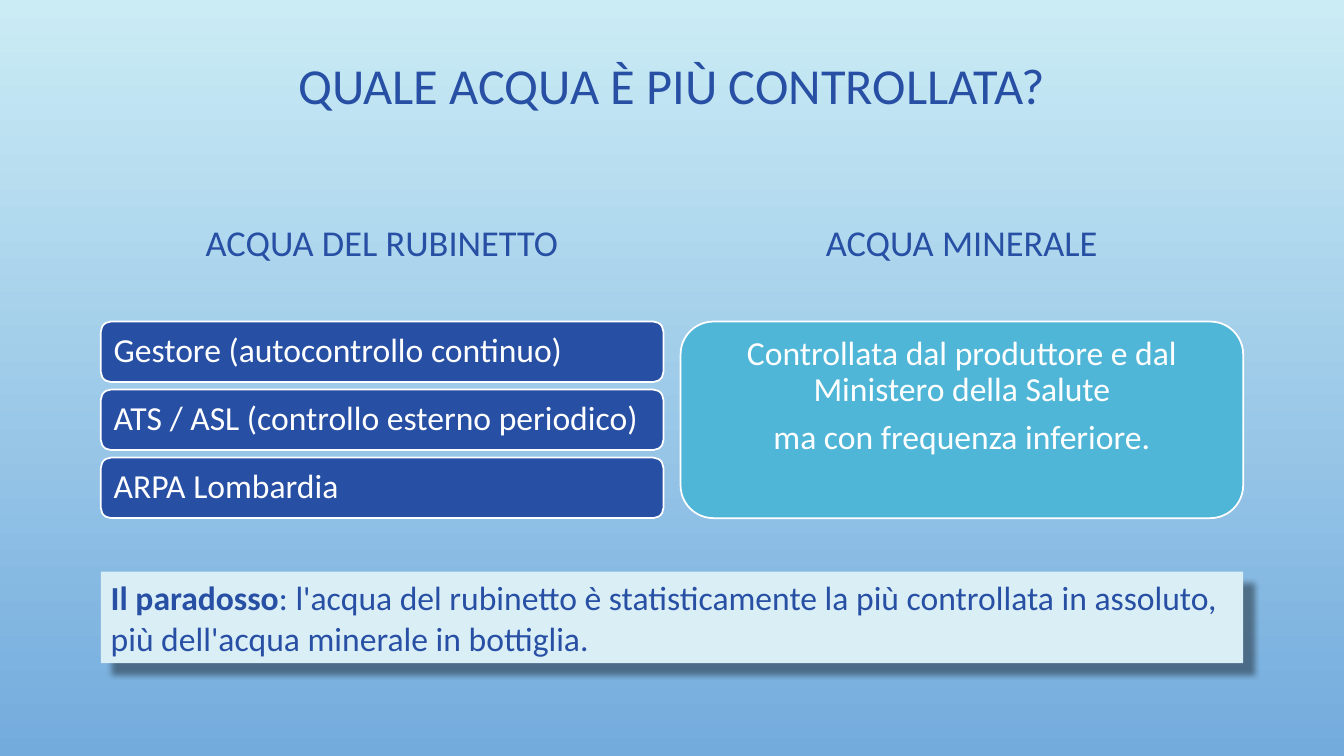
from lxml import etree
from pptx import Presentation
from pptx.dml.color import RGBColor
from pptx.enum.shapes import MSO_SHAPE as Shape
from pptx.enum.text import MSO_ANCHOR as Anchor, PP_ALIGN as Align
from pptx.oxml.ns import qn
from pptx.util import Inches, Pt

WIDTH, HEIGHT = 13.33, 7.5
MARGIN, GAP = 1, 0.17
CONTENT_WIDTH = WIDTH - 2 * MARGIN
COLUMN_WIDTH = (CONTENT_WIDTH - GAP) / 2
HEADING_TOP, HEADING_HEIGHT = 1.93, 0.74
BODY_TOP, BODY_HEIGHT = 3.19, 1.95
BAR_HEIGHT = 0.6

BLUE, CYAN, PALE, WHITE = "274FA4", "50B6D7", "DAEEF6", "FFFFFF"
SKY_TOP, SKY_BOTTOM = "CBECF5", "73ABDD"


def color(value):
    return RGBColor.from_string(value)


def write(shape, paragraphs, size, text_color, align=Align.LEFT,
          anchor=Anchor.MIDDLE, spacing=0.9, after=0):
    """Fill a shape with paragraphs, each a list of (text, bold) runs."""
    frame = shape.text_frame
    frame.word_wrap = True
    frame.vertical_anchor = anchor
    for index, runs in enumerate(paragraphs):
        paragraph = frame.add_paragraph() if index else frame.paragraphs[0]
        paragraph.alignment = align
        paragraph.line_spacing = spacing
        paragraph.space_after = Pt(after)
        for text, bold in runs:
            run = paragraph.add_run()
            run.text = text
            run.font.name = "Calibri"
            run.font.size = Pt(size)
            run.font.bold = bold
            run.font.color.rgb = color(text_color)


def add_label(slide, box, text, size, anchor, spacing):
    label = slide.shapes.add_textbox(*map(Inches, box))
    write(label, [[(text, False)]], size, BLUE, Align.CENTER, anchor, spacing)


def add_panel(slide, kind, box, fill, outline=None):
    panel = slide.shapes.add_shape(kind, *map(Inches, box))
    panel.shadow.inherit = False
    panel.fill.solid()
    panel.fill.fore_color.rgb = color(fill)
    if outline:
        panel.line.color.rgb = color(outline)
        panel.line.width = Pt(1.25)
    else:
        panel.line.fill.background()
    return panel


def add_heading(slide, left, text):
    box = (left, HEADING_TOP, COLUMN_WIDTH, HEADING_HEIGHT)
    add_label(slide, box, text, 26, Anchor.BOTTOM, 0.85)


def add_tap_column(slide, left, heading, controls):
    add_heading(slide, left, heading)
    pitch = (BODY_HEIGHT - BAR_HEIGHT) / (len(controls) - 1)
    for row, control in enumerate(controls):
        box = (left, BODY_TOP + row * pitch, COLUMN_WIDTH, BAR_HEIGHT)
        bar = add_panel(slide, Shape.ROUNDED_RECTANGLE, box, BLUE, WHITE)
        write(bar, [[(control, False)]], 24, WHITE)


def add_mineral_column(slide, left, heading, lines):
    add_heading(slide, left, heading)
    box = (left, BODY_TOP, COLUMN_WIDTH, BODY_HEIGHT)
    panel = add_panel(slide, Shape.ROUNDED_RECTANGLE, box, CYAN, WHITE)
    write(panel, [[(line, False)] for line in lines], 24, WHITE,
          Align.CENTER, Anchor.TOP, after=8.4)


def add_drop_shadow(shape):
    effects = shape._element.spPr.find(qn("a:effectLst"))
    shadow = etree.SubElement(
        effects, qn("a:outerShdw"), blurRad=str(Pt(4)), dist=str(Pt(11)),
        dir=str(45 * 60000), algn="tl", rotWithShape="0")
    black = etree.SubElement(shadow, qn("a:srgbClr"), val="000000")
    etree.SubElement(black, qn("a:alpha"), val="40000")


def add_paradox(slide, box, term, statement):
    banner = add_panel(slide, Shape.RECTANGLE, box, PALE)
    add_drop_shadow(banner)
    write(banner, [[(term, True), (statement, False)]], 24, BLUE, spacing=1.0)


def paint_background(slide):
    fill = slide.background.fill
    fill.gradient()
    fill.gradient_angle = 270
    for stop, value in zip(fill.gradient_stops, (SKY_TOP, SKY_BOTTOM)):
        stop.color.rgb = color(value)


def main():
    presentation = Presentation()
    presentation.slide_width = Inches(WIDTH)
    presentation.slide_height = Inches(HEIGHT)
    slide = presentation.slides.add_slide(presentation.slide_layouts[6])
    paint_background(slide)
    add_label(slide, (MARGIN, 0, CONTENT_WIDTH, 1.75),
              "QUALE ACQUA È PIÙ CONTROLLATA?", 36, Anchor.MIDDLE, 0.9)
    add_tap_column(slide, MARGIN, "ACQUA DEL RUBINETTO", [
        "Gestore (autocontrollo continuo)",
        "ATS / ASL (controllo esterno periodico)",
        "ARPA Lombardia",
    ])
    add_mineral_column(slide, MARGIN + COLUMN_WIDTH + GAP, "ACQUA MINERALE", [
        "Controllata dal produttore e dal Ministero della Salute",
        "ma con frequenza inferiore.",
    ])
    add_paradox(slide, (MARGIN, 5.67, CONTENT_WIDTH, 0.91), "Il paradosso",
                ": l'acqua del rubinetto è statisticamente la più controllata "
                "in assoluto, più dell'acqua minerale in bottiglia.")
    presentation.save("out.pptx")


if __name__ == "__main__":
    main()
